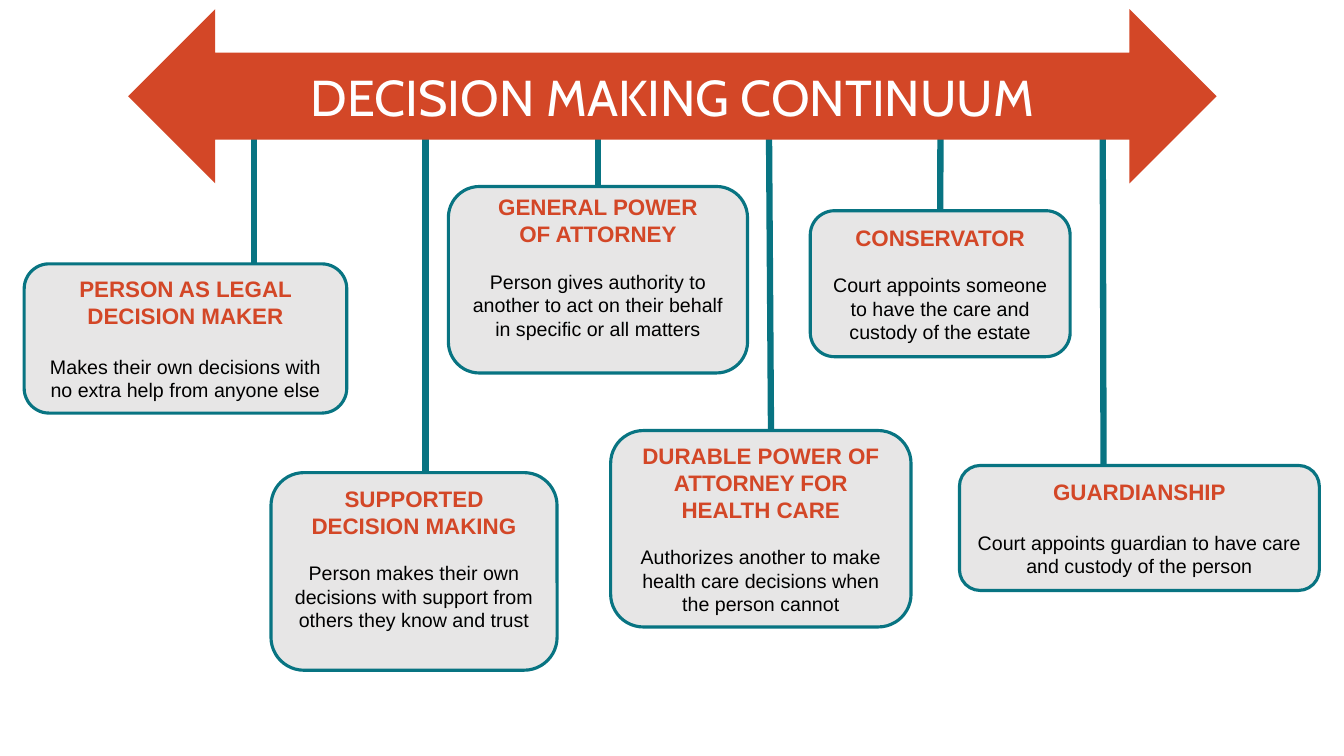
"""Build the decision making continuum slide."""
from dataclasses import dataclass

from lxml import etree
from pptx import Presentation
from pptx.dml.color import RGBColor
from pptx.enum import shapes, text
from pptx.oxml import ns
from pptx.util import Cm, Pt


@dataclass(frozen=True)
class Theme:
    """Colours, fonts and sizes of the slide."""
    accent: str = "D34727"
    line: str = "087482"
    panel: str = "E7E6E6"
    ink: str = "000000"
    light: str = "FFFFFF"
    body_font: str = "Arial"
    title_font: str = "Cabin"
    title: int = 36
    heading: int = 16
    body: int = 14
    stem: float = 4.5
    border: float = 2.25


@dataclass(frozen=True)
class Option:
    """One decision option: wording, box and stem positions in cm."""
    heading: str
    body: str
    box: tuple
    hook: float
    foot: float
    gap: float = 16
    lift: float = 0


THEME = Theme()
STEM_TOP = 3.4
ARROW = (3.23, 0.23, 27.43, 4.39)
OPTIONS = [
    Option("PERSON AS LEGAL DECISION MAKER",
           "Makes their own decisions with no extra help from anyone else",
           (0.61, 6.65, 8.13, 3.76), 6.4, 6.4, gap=18.4),
    Option("SUPPORTED DECISION MAKING",
           "Person makes their own decisions with support from others they know and trust",
           (6.83, 11.91, 7.21, 4.98), 10.72, 10.72, lift=0.65),
    Option("GENERAL POWER\vOF ATTORNEY",
           "Person gives authority to another to act on their behalf in specific or all matters",
           (11.3, 4.7, 7.54, 4.7), 15.07, 15.07, lift=0.65),
    Option("CONSERVATOR",
           "Court appoints someone to have the care and custody of the estate",
           (20.42, 5.31, 6.55, 3.68), 23.7, 23.7),
    Option("DURABLE POWER OF ATTORNEY FOR HEALTH CARE",
           "Authorizes another to make health care decisions when the person cannot",
           (15.39, 10.85, 7.57, 4.95), 19.38, 19.43),
    Option("GUARDIANSHIP",
           "Court appoints guardian to have care and custody of the person",
           (24.18, 11.73, 9.07, 3.15), 27.79, 27.81, gap=18.4),
]


def write(para, words, *, size, color, font=THEME.body_font, bold=False, before=0):
    """Fill a centred paragraph with formatted text."""
    para.text = words
    para.alignment = text.PP_ALIGN.CENTER
    if before:
        para.space_before = Pt(before)
    for span in para.runs:
        span.font.name = font
        span.font.size = Pt(size)
        span.font.bold = bold
        span.font.color.rgb = RGBColor.from_string(color)


def add_panel(page, kind, place, fill, border=None):
    """Add a flat filled shape with an optional border."""
    box = page.shapes.add_shape(kind, *map(Cm, place))
    box.shadow.inherit = False
    box.fill.solid()
    box.fill.fore_color.rgb = RGBColor.from_string(fill)
    if border:
        box.line.color.rgb = RGBColor.from_string(border)
        box.line.width = Pt(THEME.border)
    else:
        box.line.fill.background()
    return box


def add_stem(page, option, box):
    """Draw the line from the arrow down to an option box."""
    left, top, width, _ = option.box
    stem = page.shapes.add_connector(
        shapes.MSO_CONNECTOR.STRAIGHT,
        Cm(option.hook), Cm(STEM_TOP), Cm(option.foot), Cm(top))
    if abs(left + width / 2 - option.foot) < 0.05:
        stem.end_connect(box, 0)
    stem.line.color.rgb = RGBColor.from_string(THEME.line)
    stem.line.width = Pt(THEME.stem)
    etree.SubElement(stem.element.spPr, ns.qn("a:effectLst"))


def add_option(page, option):
    """Add an option box with its heading, description and stem."""
    box = add_panel(page, shapes.MSO_SHAPE.ROUNDED_RECTANGLE, option.box,
                    THEME.panel, THEME.line)
    frame = box.text_frame
    frame.word_wrap = True
    frame.vertical_anchor = text.MSO_ANCHOR.MIDDLE
    frame.margin_bottom += Cm(option.lift)
    write(frame.paragraphs[0], option.heading, size=THEME.heading,
          color=THEME.accent, bold=True)
    write(frame.add_paragraph(), option.body, size=THEME.body,
          color=THEME.ink, before=option.gap)
    add_stem(page, option, box)


def add_title(page, words):
    """Add the double arrow and lay the title over its shaft."""
    add_panel(page, shapes.MSO_SHAPE.LEFT_RIGHT_ARROW, ARROW, THEME.accent)
    left, top, width, height = ARROW
    title = page.shapes.title
    title.left, title.top = Cm(left), Cm(top + height / 4)
    title.width, title.height = Cm(width), Cm(height / 2)
    title.text_frame.vertical_anchor = text.MSO_ANCHOR.MIDDLE
    write(title.text_frame.paragraphs[0], words, size=THEME.title,
          color=THEME.light, font=THEME.title_font)
    title.element.getparent().append(title.element)


def main():
    """Build and save the deck."""
    deck = Presentation()
    deck.slide_width, deck.slide_height = Cm(33.87), Cm(19.05)
    page = deck.slides.add_slide(deck.slide_layouts.get_by_name("Title Only"))
    for option in OPTIONS:
        add_option(page, option)
    add_title(page, "DECISION MAKING CONTINUUM")
    deck.save("out.pptx")


if __name__ == "__main__":
    main()
